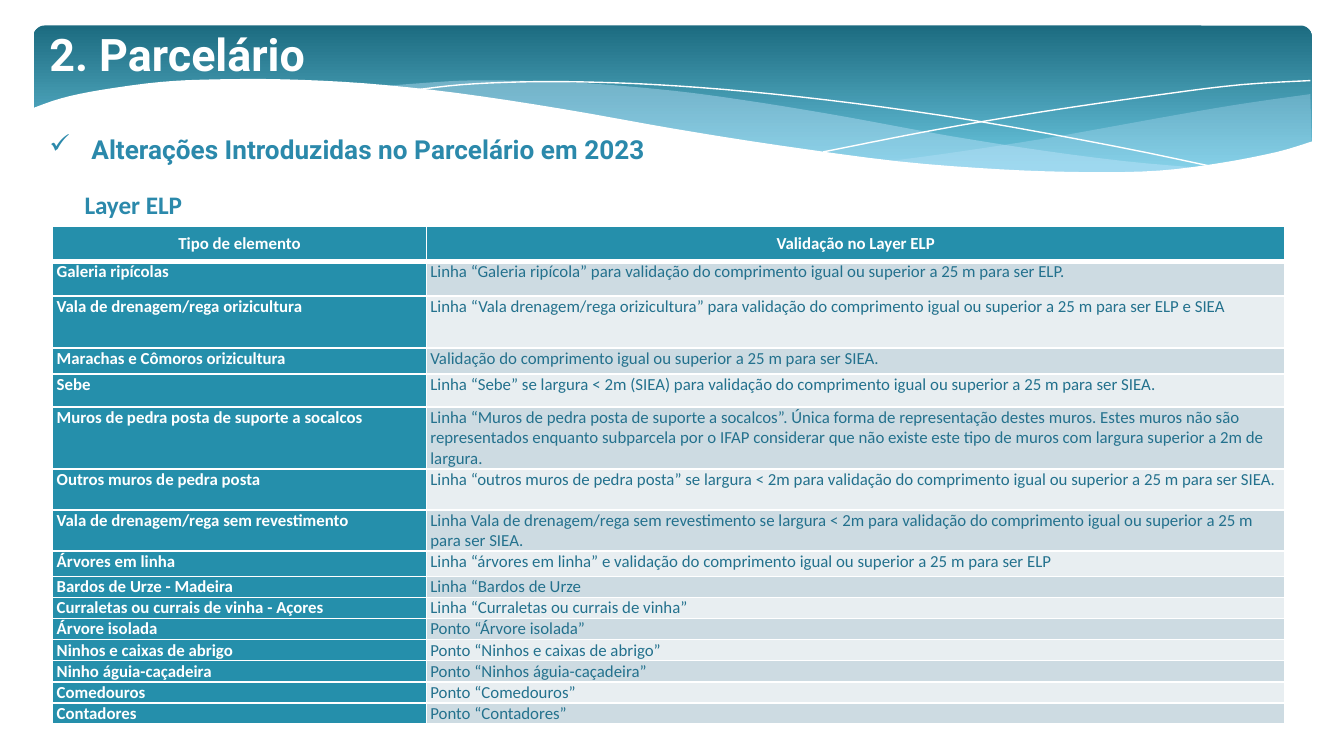
from itertools import pairwise

from lxml.etree import SubElement
from pptx import Presentation
from pptx.dml.color import RGBColor
from pptx.enum.shapes import MSO_SHAPE as Shape
from pptx.enum.text import MSO_ANCHOR as Anchor, PP_ALIGN as Align
from pptx.oxml.ns import qn
from pptx.util import Pt

WHITE, TEAL, BLUE, INK = "FFFFFF", "258FAB", "2B89AB", "23718D"
BANDS = ["CDDBE2", "E8EEF1"]
RIGHT_TOP = [(684, 36.7), (645, 42.3), (602, 49.7), (543, 60.3), (490, 68.4), (458, 72.7)]
RIGHT_BOTTOM = [(458, 72.7), (499, 76.3), (536, 78.5), (568, 79.2), (597, 78.5),
                (628, 75.6), (655, 70.5), (684.7, 62.6)]
SWELL_TOP = [(625, 76.3), (585, 72.7), (540, 66.9), (490, 59), (435, 48.9), (392, 41.7),
             (352, 36), (316, 32.4), (284, 30.2), (256, 29.5), (230, 29.5), (207, 30.9),
             (188, 32.4)]
SWELL_BOTTOM = [(188, 32.4), (228, 36.7), (273, 43.2), (336, 54.7), (390, 63.3),
                (438, 70.5), (482, 74.9), (521, 78.5), (555, 79.9), (585, 79.2), (625, 76.3)]
FALLING = [(204.5, 34.5), (229, 31.7), (261, 30.2), (294, 30.2), (334, 31.7), (382, 35.3),
           (440, 41.7), (505, 51.1), (580, 64.8), (635, 76.3)]
RISING = [(423, 67.7), (482, 56.1), (541, 46.1), (606, 36.7), (647, 31.7), (684, 29.5)]
FOOT = [(685.4, 61.9), (666, 67.7), (637, 73.4), (603, 77.7), (564, 78.5), (518, 77),
        (463, 72.7), (399, 64.1), (344, 55.4), (283, 44.6), (226, 36), (177, 30.9),
        (134, 28.8), (98, 28.8), (68, 30.2), (36, 34.5), (15, 38.9), (-1.4, 44.6)]
FOOT_CORNERS = [(-1.4, 107.3), (685.4, 107.3)]
HEADERS = ["Tipo de elemento", "Validação no Layer ELP"]
ROWS = [
    (18.5, "Galeria ripícolas", "Linha “Galeria ripícola” para validação do comprimento igual ou superior a 25 m para ser ELP."),
    (28, "Vala de drenagem/rega orizicultura", "Linha “Vala drenagem/rega orizicultura” para validação do comprimento igual ou superior a 25 m para ser ELP e SIEA"),
    (13.8, "Marachas e Cômoros orizicultura", "Validação do comprimento igual ou superior a 25 m para ser SIEA."),
    (17.8, "Sebe", "Linha “Sebe” se largura < 2m (SIEA) para validação do comprimento igual ou superior a 25 m para ser SIEA."),
    (33, "Muros de pedra posta de suporte a socalcos", "Linha “Muros de pedra posta de suporte a socalcos”. Única forma de representação destes muros. Estes muros não são representados enquanto subparcela por o IFAP considerar que não existe este tipo de muros com largura superior a 2m de largura."),
    (22, "Outros muros de pedra posta", "Linha “outros muros de pedra posta” se largura < 2m para validação do comprimento igual ou superior a 25 m para ser SIEA."),
    (22, "Vala de drenagem/rega sem revestimento", "Linha Vala de drenagem/rega sem revestimento se largura < 2m para validação do comprimento igual ou superior a 25 m para ser SIEA."),
    (13.5, "Árvores em linha", "Linha “árvores em linha” e validação do comprimento igual ou superior a 25 m para ser ELP"),
    (11.3, "Bardos de Urze - Madeira", "Linha “Bardos de Urze"),
    (11.3, "Curraletas ou currais de vinha - Açores", "Linha “Curraletas ou currais de vinha”"),
    (11.3, "Árvore isolada", "Ponto “Árvore isolada”"),
    (11.3, "Ninhos e caixas de abrigo", "Ponto “Ninhos e caixas de abrigo”"),
    (11.3, "Ninho águia-caçadeira", "Ponto “Ninhos águia-caçadeira”"),
    (11.3, "Comedouros", "Ponto “Comedouros”"),
    (11.3, "Contadores", "Ponto “Contadores”"),
]


def color(value):
    return RGBColor.from_string(value)


def write(frame, text, size=9, font="Calibri", ink=WHITE, bold=True, align=None, bullet=None):
    para = frame.paragraphs[0]
    if bullet:
        props = para._p.get_or_add_pPr()
        props.set("marL", str(Pt(22.5)))
        props.set("indent", str(-Pt(22.5)))
        SubElement(props, qn("a:buChar")).set("char", bullet)
    if align is not None:
        para.alignment = align
    span = para.add_run()
    span.text = text
    span.font.size = Pt(size)
    span.font.name = font
    span.font.bold = bold
    span.font.color.rgb = color(ink)


def smooth(knots, steps=4):
    padded = [knots[0], *knots, knots[-1]]
    points = [knots[0]]
    for index, (start, end) in enumerate(pairwise(knots)):
        before, after = padded[index], padded[index + 3]
        for step in range(1, steps + 1):
            t = step / steps
            points.append(tuple(
                b + t / 2 * (c - a + t * (2 * a - 5 * b + 4 * c - d + t * (3 * (b - c) + d - a)))
                for a, b, c, d in zip(before, start, end, after)))
    return points


def outline(page, box, points, fill=None, opacity=100):
    left, top = box[:2]
    spots = [(Pt(left + x), Pt(top + y)) for x, y in points]
    builder = page.shapes.build_freeform(*spots[0], scale=1.0)
    builder.add_line_segments(spots[1:], close=fill is not None)
    shape = builder.convert_to_shape()
    shape.shadow.inherit = False
    if fill is None:
        shape.fill.background()
        shape.line.color.rgb = color(WHITE)
        shape.line.width = Pt(0)
        return
    shape.line.fill.background()
    shape.fill.solid()
    shape.fill.fore_color.rgb = color(fill)
    if opacity < 100:
        paint = shape.element.spPr.find(qn("a:solidFill"))[0]
        SubElement(paint, qn("a:alpha")).set("val", str(opacity * 1000))


def add_banner(page, box):
    panel = page.shapes.add_shape(Shape.ROUNDED_RECTANGLE, *map(Pt, box))
    panel.adjustments[0] = 0.07
    panel.shadow.inherit = False
    panel.line.fill.background()
    panel.fill.gradient()
    panel.fill.gradient_angle = 270
    for stop, (place, shade) in zip(panel.fill.gradient_stops, [(0, "1C6B80"), (0.9, "6AC6DF")]):
        stop.position = place
        stop.color.rgb = color(shade)
    outline(page, box, smooth(RIGHT_TOP) + smooth(RIGHT_BOTTOM), "C6E7FC", 29)
    outline(page, box, smooth(SWELL_TOP) + smooth(SWELL_BOTTOM), "C6E7FC", 40)
    outline(page, box, smooth(FALLING))
    outline(page, box, smooth(RISING))
    outline(page, box, smooth(FOOT) + FOOT_CORNERS, WHITE)


def add_label(page, box, text, **style):
    frame = page.shapes.add_textbox(*map(Pt, box)).text_frame
    frame.word_wrap = True
    write(frame, text, **style)


def add_borders(cell, **widths):
    props = cell._tc.get_or_add_tcPr()
    for side in "LRTB":
        line = SubElement(props, qn(f"a:ln{side}"), w=str(Pt(widths.get(side, 1))))
        fill = SubElement(line, qn("a:solidFill"))
        SubElement(fill, qn("a:srgbClr"), val=WHITE)


def fill_cell(cell, text, fill, borders, anchor=Anchor.TOP, **style):
    cell.margin_left = cell.margin_right = Pt(2.2)
    cell.margin_top, cell.margin_bottom = Pt(0.3), Pt(0)
    cell.vertical_anchor = anchor
    add_borders(cell, **borders)
    cell.fill.solid()
    cell.fill.fore_color.rgb = color(fill)
    write(cell.text_frame, text, **style)


def add_elements_table(page, box):
    table = page.shapes.add_table(len(ROWS) + 1, 2, *map(Pt, box)).table
    first = 200.2
    table.columns[0].width = Pt(first)
    table.columns[1].width = Pt(box[2] - first)
    table.rows[0].height = Pt(18.7)
    for column, header in enumerate(HEADERS):
        fill_cell(table.cell(0, column), header, TEAL, {"B": 3}, Anchor.MIDDLE, align=Align.CENTER)
    for index, (height, kind, check) in enumerate(ROWS, start=1):
        table.rows[index].height = Pt(height)
        borders = {"T": 3} if index == 1 else {}
        fill_cell(table.cell(index, 0), kind, TEAL, borders)
        fill_cell(table.cell(index, 1), check, BANDS[(index - 1) % 2], borders, ink=INK, bold=False)


def main():
    deck = Presentation()
    deck.slide_width, deck.slide_height = Pt(720), Pt(405)
    page = deck.slides.add_slide(deck.slide_layouts[6])
    add_banner(page, (18, 13.7, 684.7, 84.2))
    add_elements_table(page, (28.2, 121.3, 660.2, 265))
    add_label(page, (19.4, 10.8, 216, 36), "2. Parcelário", size=24, font="Roboto")
    add_label(page, (19.4, 67.7, 445, 24.5), "Alterações Introduzidas no Parcelário em 2023",
              size=14, font="Roboto", ink=BLUE, bullet="✓")
    add_label(page, (38.2, 97.9, 216, 23.8), "Layer ELP", size=13.5, ink=BLUE)
    deck.save("out.pptx")


if __name__ == "__main__":
    main()
